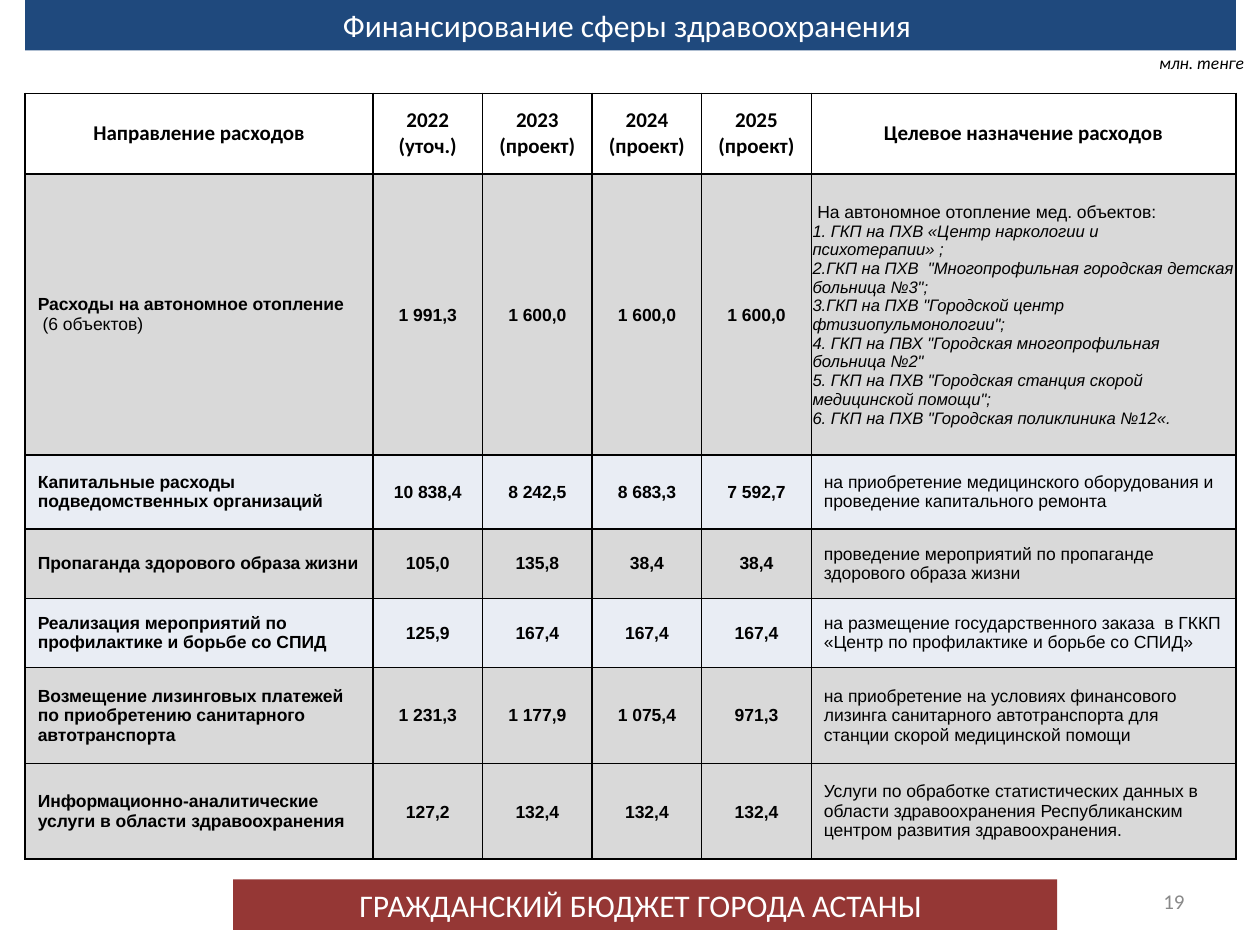
from lxml.etree import SubElement
from pptx import Presentation
from pptx.dml.color import RGBColor
from pptx.enum.shapes import MSO_SHAPE as Shape
from pptx.enum.text import MSO_ANCHOR as Anchor, MSO_AUTO_SIZE as AutoSize, PP_ALIGN as Align
from pptx.oxml.ns import qn
from pptx.util import Inches, Pt

WHITE = RGBColor(0xFF, 0xFF, 0xFF)
BLACK = RGBColor(0, 0, 0)
NAVY = RGBColor(0x1F, 0x49, 0x7D)
BRICK = RGBColor(0x95, 0x37, 0x35)
GREY = RGBColor(0xD9, 0xD9, 0xD9)
PALE = RGBColor(0xE9, 0xED, 0xF4)
MUTED = RGBColor(0x89, 0x89, 0x89)

COLUMN_WIDTHS = [2.76, 0.87, 0.87, 0.87, 0.87, 3.37]
ROW_HEIGHTS = [0.64, 2.23, 0.59, 0.55, 0.55, 0.76, 0.76]
HEADERS = [
    "Направление расходов", "2022 (уточ.)", "2023\n(проект)", "2024\n(проект)",
    "2025\n(проект)", "Целевое назначение расходов",
]
HEATING_NAME = ["Расходы на автономное отопление", (" (6 объектов)", {"bold": False})]
FACILITIES = [
    "1. ГКП на ПХВ «Центр наркологии и психотерапии» ;",
    '2.ГКП на ПХВ  "Многопрофильная городская детская больница №3";',
    '3.ГКП на ПХВ "Городской центр фтизиопульмонологии";',
    '4. ГКП на ПВХ "Городская многопрофильная  больница №2"',
    '5. ГКП на ПХВ "Городская станция скорой медицинской помощи";',
    '6. ГКП на ПХВ "Городская поликлиника №12«.',
]
HEATING_PURPOSE = [" На автономное отопление мед. объектов:"] + [
    (facility, {"size": 9.5, "italic": True}) for facility in FACILITIES
]
EXPENSES = [
    (HEATING_NAME, ["1 991,3", "1 600,0", "1 600,0", "1 600,0"], HEATING_PURPOSE, GREY),
    ("Капитальные расходы подведомственных организаций",
     ["10 838,4", "8 242,5", "8 683,3", "7 592,7"],
     "на приобретение медицинского оборудования и проведение капитального ремонта", PALE),
    ("Пропаганда здорового образа жизни", ["105,0", "135,8", "38,4", "38,4"],
     "проведение мероприятий по пропаганде здорового образа жизни", GREY),
    ("Реализация мероприятий по профилактике и борьбе со СПИД",
     ["125,9", "167,4", "167,4", "167,4"],
     "на размещение государственного заказа  в ГККП "
     "«Центр по профилактике и борьбе со СПИД»", PALE),
    ("Возмещение лизинговых платежей по приобретению санитарного автотранспорта",
     ["1 231,3", "1 177,9", "1 075,4", "971,3"],
     "на приобретение на условиях финансового лизинга санитарного автотранспорта "
     "для станции скорой медицинской помощи", GREY),
    ("Информационно-аналитические услуги в области здравоохранения",
     ["127,2", "132,4", "132,4", "132,4"],
     "Услуги по обработке статистических данных в области здравоохранения "
     "Республиканским центром развития здравоохранения.", GREY),
]
TIGHT_VALUE_ROWS = {1, 2, 6}


def format_run(run, font="Arial", size=10, color=BLACK, bold=False, italic=False):
    run.font.name = font
    run.font.size = Pt(size)
    run.font.color.rgb = color
    run.font.bold = bold
    run.font.italic = italic


def write_text(frame, text, align=Align.LEFT, **style):
    lines = text.split("\n") if isinstance(text, str) else text
    for index, line in enumerate(lines):
        content, changes = line if isinstance(line, tuple) else (line, {})
        paragraph = frame.add_paragraph() if index else frame.paragraphs[0]
        paragraph.alignment = align
        run = paragraph.add_run()
        run.text = content
        format_run(run, **{**style, **changes})


class SlideBuilder:
    def __init__(self, slide, font="Calibri"):
        self.slide = slide
        self.font = font

    def title(self, text, box, fill):
        shape = self.slide.shapes.title
        shape.left, shape.top, shape.width, shape.height = map(Inches, box)
        shape.fill.solid()
        shape.fill.fore_color.rgb = fill
        frame = shape.text_frame
        frame.auto_size = AutoSize.NONE
        frame.vertical_anchor = Anchor.MIDDLE
        write_text(frame, text, align=Align.CENTER, font=self.font, size=18, color=WHITE)

    def bar(self, box, fill):
        shape = self.slide.shapes.add_shape(Shape.RECTANGLE, *map(Inches, box))
        shape.shadow.inherit = False
        shape.fill.solid()
        shape.fill.fore_color.rgb = fill
        shape.line.fill.background()

    def text(self, text, box, anchor=Anchor.TOP, **style):
        frame = self.slide.shapes.add_textbox(*map(Inches, box)).text_frame
        frame.word_wrap = True
        frame.vertical_anchor = anchor
        write_text(frame, text, font=self.font, **style)

    def table(self, left, top, widths, heights):
        box = map(Inches, (left, top, sum(widths), sum(heights)))
        table = self.slide.shapes.add_table(len(heights), len(widths), *box).table
        table.horz_banding = False
        for column, width in zip(table.columns, widths):
            column.width = Inches(width)
        for row, height in zip(table.rows, heights):
            row.height = Inches(height)
        return table

    def cell(self, cell, text, fill, tight=False, **style):
        properties = cell._tc.get_or_add_tcPr()
        for side in ("lnL", "lnR", "lnT", "lnB"):
            line = SubElement(properties, qn(f"a:{side}"), w=str(Pt(1)))
            solid = SubElement(line, qn("a:solidFill"))
            SubElement(solid, qn("a:srgbClr"), val=str(BLACK))
        cell.fill.solid()
        cell.fill.fore_color.rgb = fill
        cell.vertical_anchor = Anchor.MIDDLE
        if tight:
            cell.margin_left = cell.margin_right = cell.margin_top = Inches(0.01)
            cell.margin_bottom = 0
        write_text(cell.text_frame, text, **style)


def main():
    presentation = Presentation()
    presentation.slide_width, presentation.slide_height = Inches(10), Inches(7.5)
    slide = presentation.slides.add_slide(presentation.slide_layouts[5])
    builder = SlideBuilder(slide)

    table = builder.table(0.2, 0.74, COLUMN_WIDTHS, ROW_HEIGHTS)
    for column, header in enumerate(HEADERS):
        builder.cell(table.cell(0, column), header, WHITE, align=Align.CENTER,
                     font=builder.font, size=12, bold=True)
    for row, (name, values, purpose, fill) in enumerate(EXPENSES, start=1):
        builder.cell(table.cell(row, 0), name, fill, bold=True)
        for column, value in enumerate(values, start=1):
            builder.cell(table.cell(row, column), value, fill,
                         tight=row in TIGHT_VALUE_ROWS, align=Align.CENTER, bold=True)
        builder.cell(table.cell(row, 5), purpose, fill, tight=purpose is HEATING_PURPOSE)

    builder.title("Финансирование сферы здравоохранения ", (0.2, 0, 9.61, 0.4), NAVY)
    builder.text("млн. тенге", (9.1, 0.36, 1.09, 0.27), italic=True)
    builder.bar((1.85, 6.98, 6.54, 0.4), BRICK)
    builder.text("ГРАЖДАНСКИЙ БЮДЖЕТ ГОРОДА АСТАНЫ", (2.17, 6.98, 5.83, 0.4),
                 align=Align.CENTER, size=18, color=WHITE)
    builder.text("19", (7.17, 6.95, 2.33, 0.4), anchor=Anchor.MIDDLE,
                 align=Align.RIGHT, size=12, color=MUTED)
    presentation.save("out.pptx")


if __name__ == "__main__":
    main()
